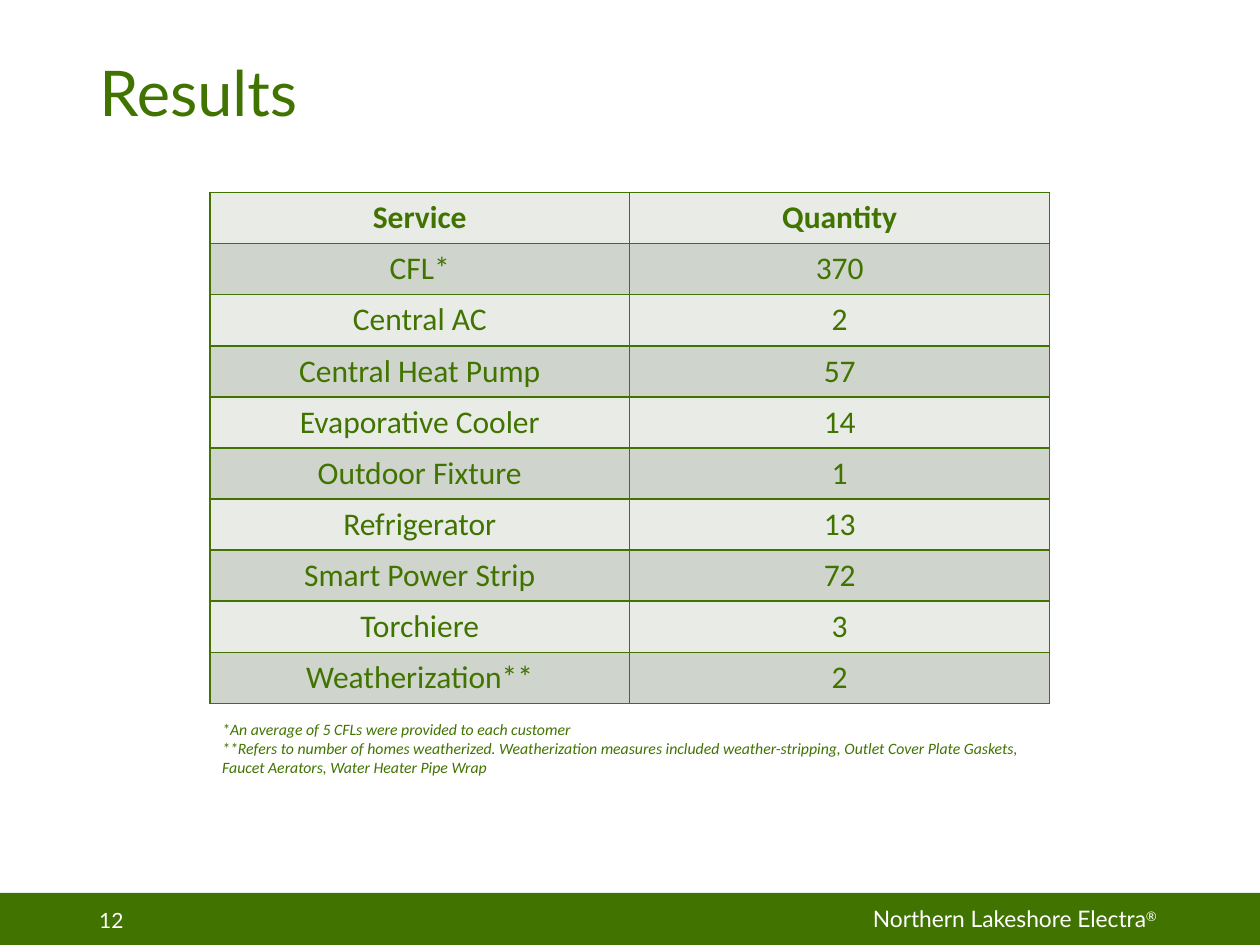
from dataclasses import dataclass

from lxml import etree
from pptx import Presentation
from pptx.dml.color import RGBColor
from pptx.enum.shapes import MSO_SHAPE
from pptx.enum.text import MSO_ANCHOR, PP_ALIGN
from pptx.oxml.ns import qn
from pptx.util import Cm, Pt

RECTANGLE = MSO_SHAPE.RECTANGLE
MIDDLE, TOP = MSO_ANCHOR.MIDDLE, MSO_ANCHOR.TOP
LEFT, CENTER = PP_ALIGN.LEFT, PP_ALIGN.CENTER


@dataclass(frozen=True)
class Theme:
    green: str = "417300"
    white: str = "FFFFFF"
    bands: tuple = ("E9EBE7", "CFD5CC")
    heading_font: str = "Lato"
    body_font: str = "Calibri"
    title_size: int = 36
    table_size: int = 18
    footer_size: int = 13
    number_size: int = 12
    note_size: int = 9


theme = Theme()


def add_run(paragraph, text, font, size, color, bold=False, italic=False):
    run = paragraph.add_run()
    run.text = text
    run.font.name = font
    run.font.size = Pt(size)
    run.font.color.rgb = RGBColor.from_string(color)
    run.font.bold = bold
    run.font.italic = italic
    return run


def add_text_frame(slide, left, top, width, height, anchor):
    box = slide.shapes.add_textbox(Cm(left), Cm(top), Cm(width), Cm(height))
    box.text_frame.word_wrap = True
    box.text_frame.vertical_anchor = anchor
    return box.text_frame


presentation = Presentation()
presentation.slide_width = Cm(25.4)
presentation.slide_height = Cm(19.05)
slide = presentation.slides.add_slide(presentation.slide_layouts[5])

footer_bar = slide.shapes.add_shape(RECTANGLE, Cm(0), Cm(18), Cm(25.4), Cm(1.05))
footer_bar.shadow.inherit = False
footer_bar.fill.solid()
footer_bar.fill.fore_color.rgb = RGBColor.from_string(theme.green)
footer_bar.line.fill.background()

title = slide.shapes.title
title.left, title.top, title.width, title.height = Cm(1.75), Cm(0.76), Cm(21.9), Cm(2.34)
title.text_frame.vertical_anchor = MIDDLE
paragraph = title.text_frame.paragraphs[0]
paragraph.alignment = LEFT
paragraph.line_spacing = 0.9
add_run(paragraph, "Results", theme.heading_font, theme.title_size, theme.green)

paragraph = add_text_frame(slide, 17.27, 18.01, 6.38, 1.02, MIDDLE).paragraphs[0]
paragraph.alignment = CENTER
footer_style = (theme.heading_font, theme.footer_size, theme.white)
add_run(paragraph, "Northern Lakeshore Electra", *footer_style)
registered = add_run(paragraph, "®", *footer_style)
registered.font._element.set("baseline", "28000")

services = [
    ("Service", "Quantity"),
    ("CFL*", "370"),
    ("Central AC", "2"),
    ("Central Heat Pump", "57"),
    ("Evaporative Cooler", "14"),
    ("Outdoor Fixture", "1"),
    ("Refrigerator", "13"),
    ("Smart Power Strip", "72"),
    ("Torchiere", "3"),
    ("Weatherization**", "2"),
]
table = slide.shapes.add_table(
    len(services), 2, Cm(4.23), Cm(3.88), Cm(16.93), Cm(10.3)
).table
for row_index, service in enumerate(services):
    table.rows[row_index].height = Cm(1.03)
    for column_index, text in enumerate(service):
        cell = table.cell(row_index, column_index)
        paragraph = cell.text_frame.paragraphs[0]
        paragraph.alignment = CENTER
        add_run(paragraph, text, theme.body_font, theme.table_size, theme.green,
                bold=row_index == 0)
        properties = cell._tc.get_or_add_tcPr()
        for side in ("a:lnL", "a:lnR", "a:lnT", "a:lnB"):
            border = etree.SubElement(properties, qn(side), w=str(Pt(1)))
            border_fill = etree.SubElement(border, qn("a:solidFill"))
            etree.SubElement(border_fill, qn("a:srgbClr"), val=theme.green)
        cell.fill.solid()
        cell.fill.fore_color.rgb = RGBColor.from_string(theme.bands[row_index % 2])

notes = [
    "*An average of 5 CFLs were provided to each customer",
    "**Refers to number of homes weatherized. Weatherization measures included "
    "weather-stripping, Outlet Cover Plate Gaskets, Faucet Aerators, Water Heater Pipe Wrap",
]
notes_frame = add_text_frame(slide, 4.23, 14.38, 16.93, 1.42, TOP)
for index, note in enumerate(notes):
    paragraph = notes_frame.add_paragraph() if index else notes_frame.paragraphs[0]
    add_run(paragraph, note, theme.body_font, theme.note_size, theme.green, italic=True)

paragraph = add_text_frame(slide, 1.75, 18.03, 5.72, 1.02, MIDDLE).paragraphs[0]
add_run(paragraph, "12", theme.heading_font, theme.number_size, theme.white)

presentation.save("out.pptx")
